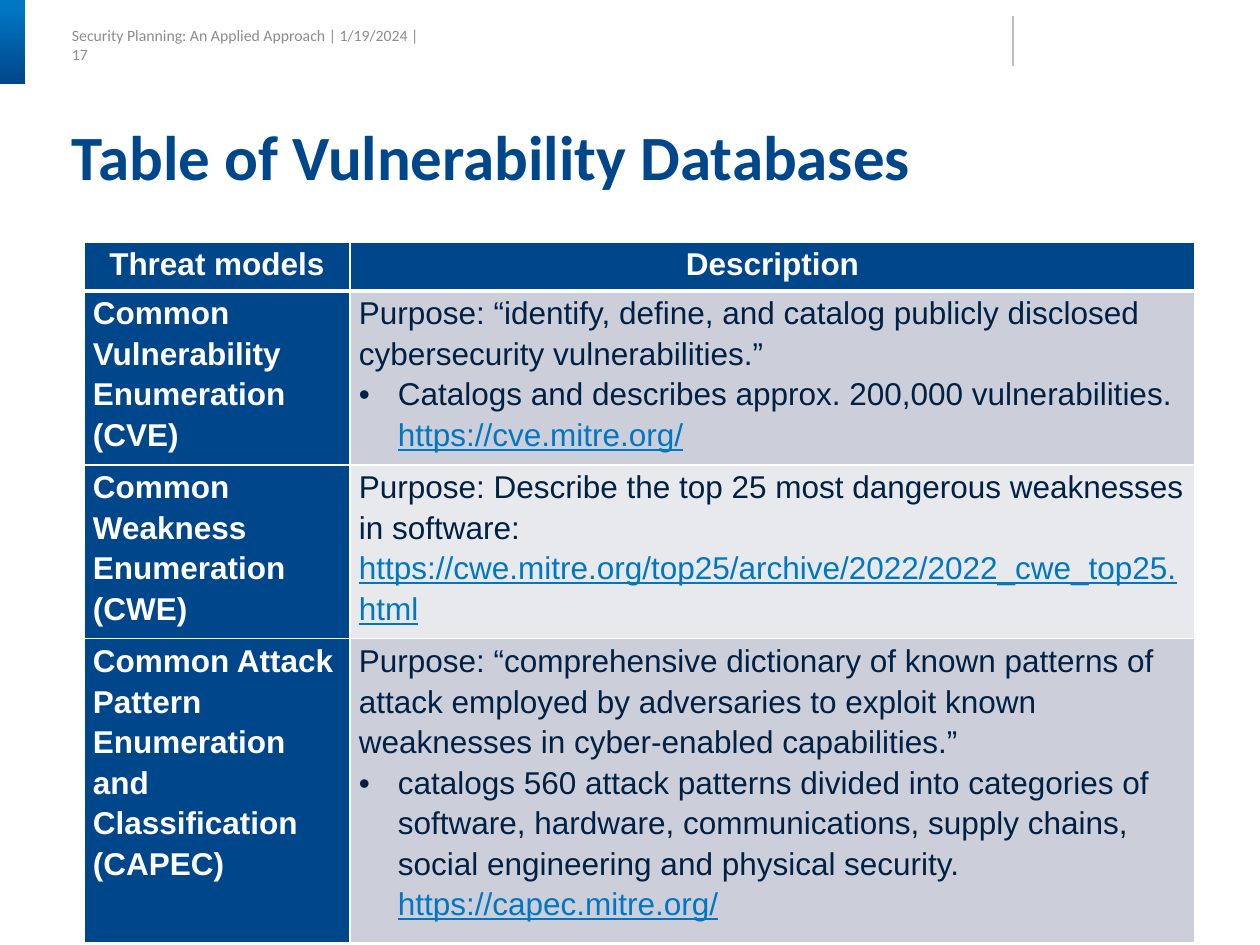
from dataclasses import dataclass

from lxml.etree import SubElement
from pptx import Presentation
from pptx.dml.color import RGBColor
from pptx.enum.shapes import MSO_CONNECTOR as Connector, MSO_SHAPE as Shape
from pptx.enum.text import MSO_ANCHOR as Anchor, MSO_AUTO_SIZE as AutoSize, PP_ALIGN as Align
from pptx.oxml.ns import qn
from pptx.util import Emu, Pt

EMU_PER_PX = 914400 / 126


def px(length):
    return Emu(round(length * EMU_PER_PX))


@dataclass(frozen=True)
class Theme:
    navy: str = "00468A"
    blue: str = "0176C3"
    ink: str = "002143"
    white: str = "FFFFFF"
    grey: str = "8C8C8C"
    rule: str = "BFBFBF"
    bands: tuple = ("CCCFDA", "E7E9ED")
    heading_font: str = "Calibri"
    table_font: str = "Arial"
    title_size: int = 36
    table_size: int = 18
    header_size: int = 9


@dataclass(frozen=True)
class Item:
    """One paragraph of a description, with an optional link on its own line."""
    text: str
    link: str = ""
    bullet: bool = False


HEADINGS = ("Threat models", "Description")
DATABASES = (
    ("Common Vulnerability Enumeration (CVE)", (
        Item("Purpose: “identify, define, and catalog publicly disclosed "
             "cybersecurity vulnerabilities.”"),
        Item("Catalogs and describes approx. 200,000 vulnerabilities.",
             "https://cve.mitre.org/", bullet=True))),
    ("Common Weakness Enumeration (CWE)", (
        Item("Purpose: Describe the top 25 most dangerous weaknesses in software:",
             "https://cwe.mitre.org/top25/archive/2022/2022_cwe_top25.html"),)),
    ("Common Attack Pattern Enumeration and Classification (CAPEC)", (
        Item("Purpose: “comprehensive dictionary of known patterns of attack employed by "
             "adversaries to exploit known weaknesses in cyber-enabled capabilities.”"),
        Item("catalogs 560 attack patterns divided into categories of software, hardware, "
             "communications, supply chains, social engineering and physical security.",
             "https://capec.mitre.org/", bullet=True))),
)


class SlideBuilder:
    def __init__(self, slide, theme):
        self.slide = slide
        self.theme = theme

    def style(self, run, font, size, color, bold=False, underline=False):
        run.font.name = font
        run.font.size = Pt(size)
        run.font.bold = bold
        run.font.underline = underline
        run.font.color.rgb = RGBColor.from_string(color)

    def clear_margins(self, frame):
        frame.margin_left = frame.margin_right = 0
        frame.margin_top = frame.margin_bottom = 0
        frame.vertical_anchor = Anchor.MIDDLE

    def title(self, text, left, top, width, height):
        title = self.slide.shapes.title
        title.left, title.top = px(left), px(top)
        title.width, title.height = px(width), px(height)
        frame = title.text_frame
        frame.text = text
        self.clear_margins(frame)
        frame.auto_size = AutoSize.NONE
        heading = frame.paragraphs[0]
        heading.alignment = Align.LEFT
        heading.line_spacing = 0.9
        self.style(heading.runs[0], self.theme.heading_font, self.theme.title_size,
                   self.theme.navy, bold=True)

    def running_header(self, text, left, top, width, height):
        header = self.slide.shapes.add_textbox(px(left), px(top), px(width), px(height))
        frame = header.text_frame
        frame.text = text
        frame.word_wrap = False
        self.clear_margins(frame)
        self.style(frame.paragraphs[0].runs[0], self.theme.heading_font,
                   self.theme.header_size, self.theme.grey)

    def accent_bar(self, left, top, width, height):
        bar = self.slide.shapes.add_shape(Shape.ROUNDED_RECTANGLE, px(left), px(top),
                                          px(width), px(height))
        bar.adjustments[0] = 0
        bar.shadow.inherit = False
        bar.line.fill.background()
        bar.fill.gradient()
        bar.fill.gradient_angle = 270
        for stop, color, position in zip(bar.fill.gradient_stops,
                                         (self.theme.blue, self.theme.navy), (0.1, 1)):
            stop.color.rgb = RGBColor.from_string(color)
            stop.position = position

    def divider(self, x, top, bottom):
        divider = self.slide.shapes.add_connector(Connector.STRAIGHT, px(x), px(top),
                                                  px(x), px(bottom))
        divider.line.color.rgb = RGBColor.from_string(self.theme.rule)
        divider.line.width = Pt(0.75)
        SubElement(divider._element.spPr, qn("a:effectLst"))

    def cell_box(self, cell, color, top_border=1, bottom_border=1):
        """Set margins, borders and fill; borders must precede the fill in the XML."""
        cell.margin_left = cell.margin_right = px(9)
        cell.margin_top = cell.margin_bottom = 0
        properties = cell._tc.get_or_add_tcPr()
        for side, points in (("L", 1), ("R", 1), ("T", top_border), ("B", bottom_border)):
            border = SubElement(properties, qn(f"a:ln{side}"), w=str(Pt(points)))
            paint = SubElement(border, qn("a:solidFill"))
            SubElement(paint, qn("a:srgbClr"), val=self.theme.white)
        cell.fill.solid()
        cell.fill.fore_color.rgb = RGBColor.from_string(color)

    def label(self, cell, text, align=Align.LEFT):
        cell.text_frame.text = text
        label = cell.text_frame.paragraphs[0]
        label.alignment = align
        label.line_spacing = 1.15
        self.style(label.runs[0], self.theme.table_font, self.theme.table_size,
                   self.theme.white, bold=True)

    def description(self, cell, items):
        frame = cell.text_frame
        for index, item in enumerate(items):
            paragraph = frame.add_paragraph() if index else frame.paragraphs[0]
            paragraph.text = f"{item.text}\v{item.link}" if item.link else item.text
            paragraph.line_spacing = 1.15
            if item.bullet:
                properties = paragraph._p.get_or_add_pPr()
                properties.set("marL", str(px(39)))
                properties.set("indent", str(-px(39)))
                SubElement(properties, qn("a:buFont"), typeface=self.theme.table_font)
                SubElement(properties, qn("a:buChar"), char="•")
            for run in paragraph.runs:
                is_link = run.text == item.link
                self.style(run, self.theme.table_font, self.theme.table_size,
                           self.theme.blue if is_link else self.theme.ink,
                           underline=is_link)

    def database_table(self, left, top, column_widths, row_heights):
        table = self.slide.shapes.add_table(
            len(row_heights), len(column_widths), px(left), px(top),
            px(sum(column_widths)), px(sum(row_heights))).table
        for column, width in zip(table.columns, column_widths):
            column.width = px(width)
        for row, height in zip(table.rows, row_heights):
            row.height = px(height)
        for column, heading in enumerate(HEADINGS):
            cell = table.cell(0, column)
            self.cell_box(cell, self.theme.navy, bottom_border=3)
            self.label(cell, heading, Align.CENTER)
        for row, (name, items) in enumerate(DATABASES, start=1):
            name_cell, description_cell = table.cell(row, 0), table.cell(row, 1)
            top_border = 3 if row == 1 else 1
            self.cell_box(name_cell, self.theme.navy, top_border)
            self.label(name_cell, name)
            self.cell_box(description_cell, self.theme.bands[(row - 1) % 2], top_border)
            self.description(description_cell, items)


def main():
    presentation = Presentation()
    presentation.slide_width, presentation.slide_height = px(1260), px(945)
    title_only = presentation.slide_layouts[5]
    builder = SlideBuilder(presentation.slides.add_slide(title_only), Theme())
    builder.running_header("Security Planning: An Applied Approach | 1/19/2024 | 17",
                           72, 30, 358, 29)
    builder.accent_bar(0, 0, 25, 84)
    builder.divider(1013, 16, 66)
    builder.database_table(84, 242, (266, 845), (49, 162, 162, 282))
    builder.title("Table of Vulnerability Databases", 72, 126, 1124, 69)
    presentation.save("out.pptx")


if __name__ == "__main__":
    main()
